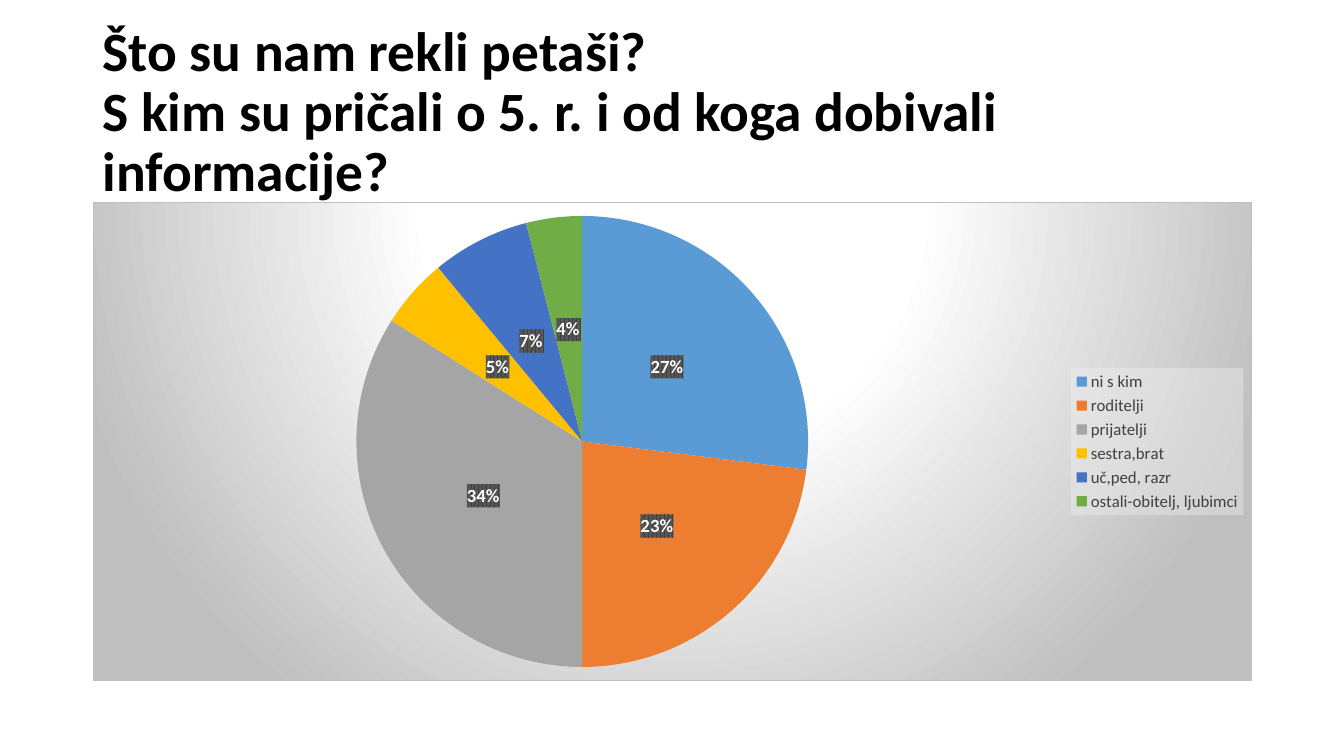
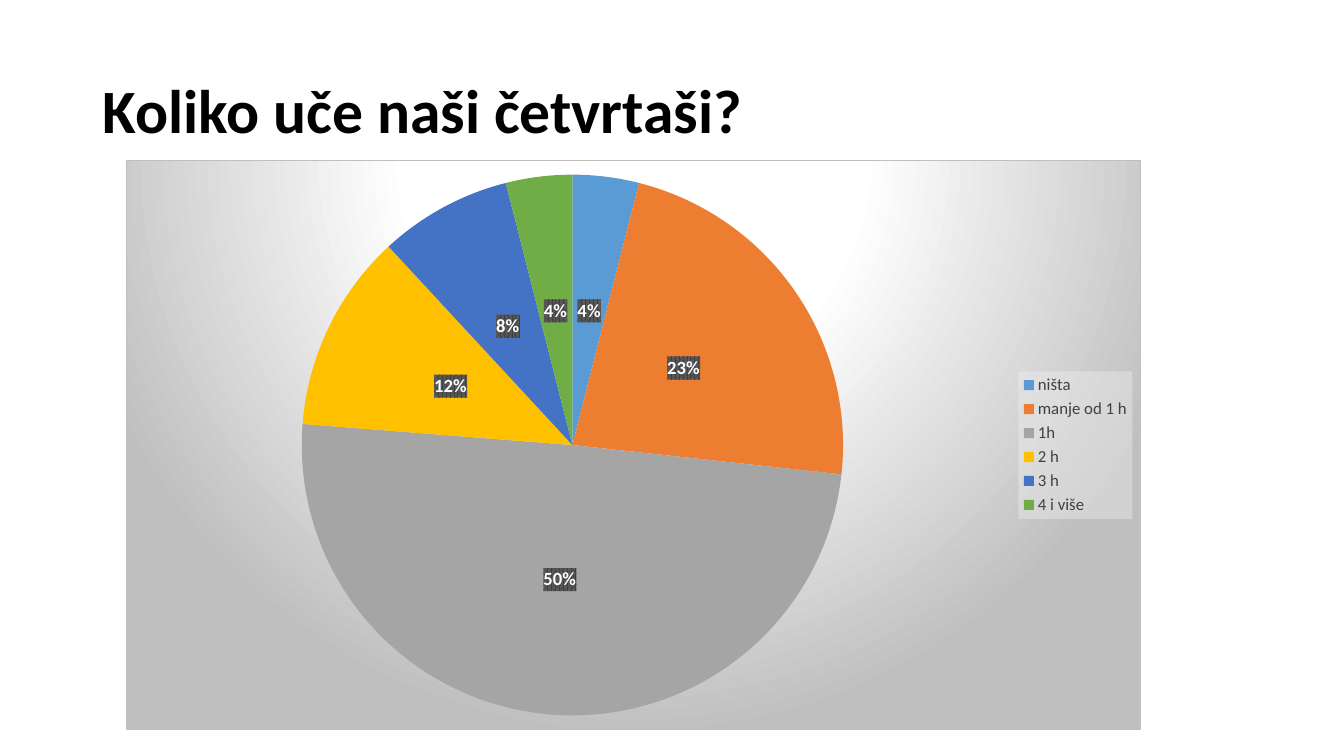
from pptx import Presentation
from pptx.chart.data import CategoryChartData
from pptx.dml.color import RGBColor
from pptx.enum.chart import XL_CHART_TYPE as ChartType
from pptx.enum.chart import XL_LABEL_POSITION as LabelPos
from pptx.enum.chart import XL_LEGEND_POSITION as LegendPos
from pptx.enum.text import MSO_ANCHOR as Anchor
from pptx.oxml import parse_xml
from pptx.oxml.ns import nsdecls, qn
from pptx.util import Inches, Pt

FONT = "Calibri"
BLACK = RGBColor(0x00, 0x00, 0x00)
WHITE = RGBColor(0xFF, 0xFF, 0xFF)
CHARCOAL = RGBColor(0x40, 0x40, 0x40)
GRAPHITE = RGBColor(0x59, 0x59, 0x59)
SILVER = RGBColor(0xBF, 0xBF, 0xBF)
MIST = RGBColor(0xF2, 0xF2, 0xF2)
SLICES = [
    RGBColor(0x5B, 0x9B, 0xD5),
    RGBColor(0xED, 0x7D, 0x31),
    RGBColor(0xA5, 0xA5, 0xA5),
    RGBColor(0xFF, 0xC0, 0x00),
    RGBColor(0x44, 0x72, 0xC4),
    RGBColor(0x70, 0xAD, 0x47),
]

CHART_AREA = f"""
<a:gradFill><a:gsLst>
  <a:gs pos="0"><a:srgbClr val="{WHITE}"/></a:gs>
  <a:gs pos="39000"><a:srgbClr val="{WHITE}"/></a:gs>
  <a:gs pos="100000"><a:srgbClr val="{SILVER}"/></a:gs>
</a:gsLst><a:path path="circle">
  <a:fillToRect l="50000" t="-80000" r="50000" b="180000"/>
</a:path></a:gradFill>
<a:ln w="9525"><a:solidFill><a:srgbClr val="{SILVER}"/></a:solidFill></a:ln>"""
LABEL_PATTERN = f"""
<a:pattFill prst="pct75">
  <a:fgClr><a:srgbClr val="{CHARCOAL}"/></a:fgClr>
  <a:bgClr><a:srgbClr val="{GRAPHITE}"/></a:bgClr>
</a:pattFill><a:ln><a:noFill/></a:ln>"""
LEGEND_VEIL = f"""
<a:solidFill><a:srgbClr val="{MIST}"><a:alpha val="39000"/></a:srgbClr></a:solidFill>
<a:ln><a:noFill/></a:ln>"""


def add_backdrop(chart_part, fill_xml):
    """Put shape properties just before the part's text properties."""
    backdrop = parse_xml(f'<c:spPr {nsdecls("c", "a")}>{fill_xml}</c:spPr>')
    chart_part.find(qn("c:txPr")).addprevious(backdrop)


class SurveyDeck:
    """Holds the presentation style and the current slide."""

    def __init__(self):
        self.prs = Presentation()
        self.prs.slide_width = Inches(13.33)
        self.prs.slide_height = Inches(7.5)
        self.slide = None

    def new_slide(self):
        self.slide = self.prs.slides.add_slide(self.prs.slide_layouts[6])

    def style_font(self, font, size, color, bold=False):
        font.name = FONT
        font.size = Pt(size)
        font.bold = bold
        font.color.rgb = color

    def title(self, text, size):
        box = self.slide.shapes.add_textbox(
            Inches(0.92), Inches(0.4), Inches(11.5), Inches(1.45))
        frame = box.text_frame
        frame.word_wrap = True
        frame.vertical_anchor = Anchor.MIDDLE
        paragraph = frame.paragraphs[0]
        paragraph.text = text
        paragraph.line_spacing = 0.9
        for run in paragraph.runs:
            self.style_font(run.font, size, BLACK, bold=True)

    def pie(self, answers, left, top, width, height):
        data = CategoryChartData()
        data.categories = list(answers)
        data.add_series("Series 1", list(answers.values()))
        chart = self.slide.shapes.add_chart(
            ChartType.PIE, Inches(left), Inches(top),
            Inches(width), Inches(height), data).chart
        chart.has_title = False
        self.style_font(chart.font, 10, BLACK)
        add_backdrop(chart.element, CHART_AREA)

        chart.has_legend = True
        chart.legend.position = LegendPos.RIGHT
        chart.legend.include_in_layout = False
        self.style_font(chart.legend.font, 12, CHARCOAL)
        add_backdrop(chart.element.find(".//" + qn("c:legend")), LEGEND_VEIL)

        plot = chart.plots[0]
        plot.vary_by_categories = True
        for index, color in enumerate(SLICES):
            slice_format = plot.series[0].points[index].format
            slice_format.fill.solid()
            slice_format.fill.fore_color.rgb = color
            slice_format.line.fill.background()

        labels = plot.series[0].data_labels
        labels.show_percentage = True
        labels.show_value = False
        labels.number_format = "0%"
        labels.number_format_is_linked = False
        labels.position = LabelPos.CENTER
        self.style_font(labels.font, 13.3, WHITE, bold=True)
        add_backdrop(chart.element.find(".//" + qn("c:dLbls")), LABEL_PATTERN)


def main():
    deck = SurveyDeck()

    deck.new_slide()
    deck.title("Što su nam rekli petaši?\v"
               "S kim su pričali o 5. r. i od koga dobivali informacije?", 39.6)
    deck.pie({"ni s kim": 27, "roditelji": 23, "prijatelji": 34,
              "sestra,brat": 5, "uč,ped, razr": 7,
              "ostali-obitelj, ljubimci": 4},
             0.92, 2, 11.5, 4.76)

    deck.new_slide()
    deck.title("Koliko uče naši četvrtaši?", 44)
    deck.pie({"ništa": 4, "manje od 1 h": 23, "1h": 50,
              "2 h": 12, "3 h": 8, "4 i više": 4},
             1.25, 1.59, 10.07, 5.65)

    deck.prs.save("out.pptx")


if __name__ == "__main__":
    main()
